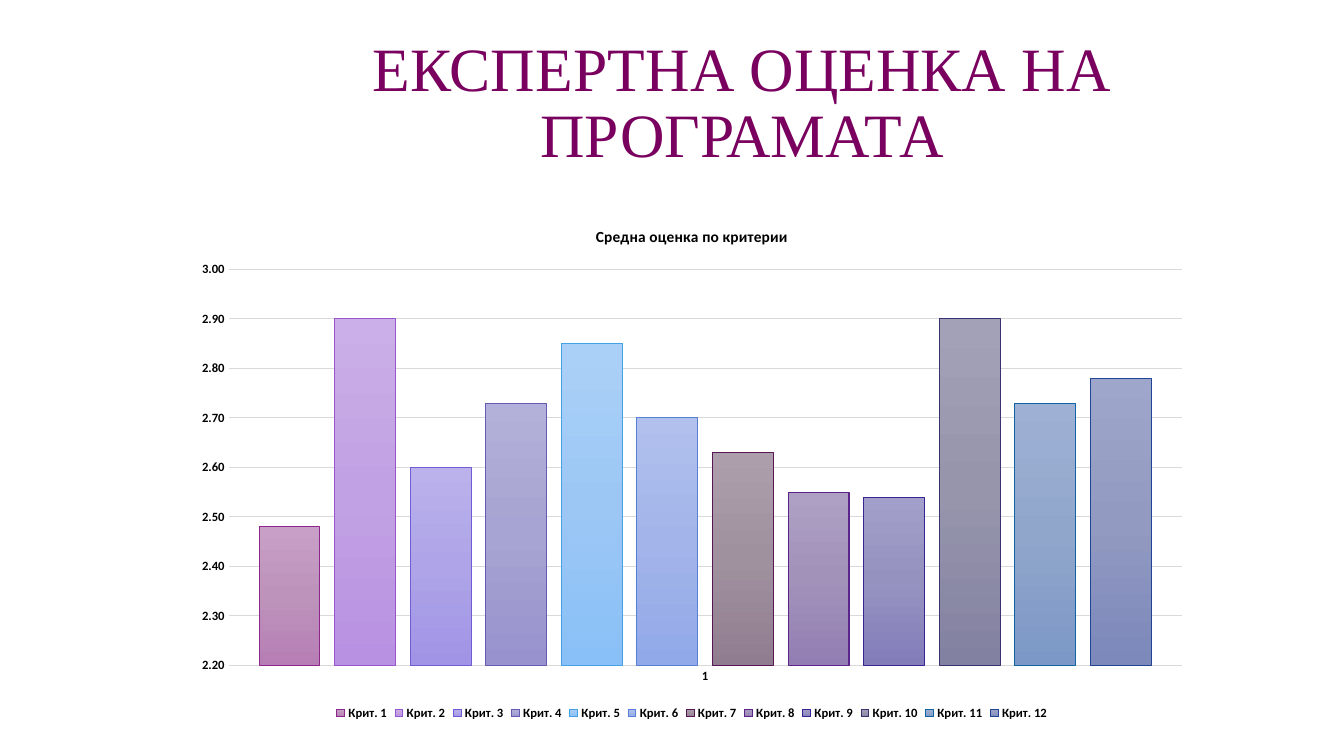
from copy import deepcopy

from pptx import Presentation
from pptx.chart.data import CategoryChartData
from pptx.dml.color import RGBColor
from pptx.enum.chart import XL_CHART_TYPE as ChartType, XL_LEGEND_POSITION as LegendPos
from pptx.enum.chart import XL_TICK_MARK as Tick
from pptx.enum.text import MSO_ANCHOR as Anchor, PP_ALIGN as Align
from pptx.util import Emu, Pt

PX = 9525
GRID = "D9D9D9"
CRITERIA = [
    (2.48, "8F268C", ("C89FC6", "BD93BB", "B67EB4")),
    (2.90, "9855CE", ("CBAFE8", "C1A1E3", "B991E3")),
    (2.60, "725BD4", ("BBB2EC", "AEA4E7", "A194E7")),
    (2.73, "645CB4", ("B3B1D9", "A7A3D2", "9893CE")),
    (2.85, "43A1E8", ("ABD0F7", "9CC7F5", "89C0F7")),
    (2.70, "577FD6", ("B1C0ED", "A2B4E9", "92A9E9")),
    (2.63, "561754", ("AC9EAB", "A0919F", "917D90")),
    (2.55, "5C248B", ("AE9FC5", "A292BA", "937EB3")),
    (2.54, "382393", ("A39FCB", "9692C0", "837EBA")),
    (2.90, "383271", ("A3A1B8", "9695AC", "8381A1")),
    (2.73, "1064A4", ("9EB1D5", "91A6CB", "7C98C7")),
    (2.78, "204595", ("9FA6CB", "929AC1", "7D88BB")),
]


def px(*lengths):
    """Turn pixel lengths into EMU."""
    return [Emu(n * PX) for n in lengths]


def rgb(color):
    """Turn a hex string into a colour."""
    return RGBColor.from_string(color)


def style_font(font, size, color, name, bold=False):
    """Set the face, size, weight and colour of a font."""
    font.name, font.size, font.bold = name, Pt(size), bold
    font.color.rgb = rgb(color)


def style_line(line, color):
    """Draw a thin solid line."""
    line.color.rgb = rgb(color)
    line.width = Pt(0.75)


def fill_gradient(series, colors):
    """Fill a series from top to bottom with three evenly spaced colours."""
    fill = series.format.fill
    fill.gradient()
    fill.gradient_angle = 270
    stop_list = series._element.xpath(".//a:gsLst")[0]
    stop_list.append(deepcopy(stop_list[0]))
    for i, (stop, color) in enumerate(zip(fill.gradient_stops, colors)):
        stop.color.rgb = rgb(color)
        stop.position = i / 2


def add_title(s, x, y, w, h):
    """Place the centred slide heading."""
    tf = s.shapes.add_textbox(*px(x, y, w, h)).text_frame
    tf.word_wrap = True
    tf.vertical_anchor = Anchor.MIDDLE
    p = tf.paragraphs[0]
    p.text = "ЕКСПЕРТНА ОЦЕНКА НА ПРОГРАМАТА"
    p.alignment = Align.CENTER
    p.line_spacing = 0.9
    style_font(p.runs[0].font, 44, "7A005F", "Times New Roman")


def add_scores(s, x, y, w, h):
    """Place the column chart of average scores."""
    data = CategoryChartData(number_format="0.00")
    data.categories = ["1"]
    for i, (value, _, _) in enumerate(CRITERIA, 1):
        data.add_series(f"Крит. {i}", [value])
    chart = s.shapes.add_chart(ChartType.COLUMN_CLUSTERED, *px(x, y, w, h), data).chart
    style_font(chart.font, 9, "000000", "Calibri", True)

    chart.has_title = True
    p = chart.chart_title.text_frame.paragraphs[0]
    p.text = "Средна оценка по критерии"
    style_font(p.runs[0].font, 11, "000000", "Calibri", True)
    chart.chart_title.include_in_layout = False

    chart.has_legend = True
    chart.legend.position = LegendPos.BOTTOM
    chart.legend.include_in_layout = False
    style_font(chart.legend.font, 9, "000000", "Calibri", True)

    for axis in (chart.category_axis, chart.value_axis):
        axis.major_tick_mark = axis.minor_tick_mark = Tick.NONE
        style_font(axis.tick_labels.font, 9, "000000", "Calibri", True)
    style_line(chart.category_axis.format.line, GRID)
    scale = chart.value_axis
    scale.minimum_scale, scale.maximum_scale, scale.major_unit = 2.2, 3, 0.1
    scale.tick_labels.number_format = "0.00"
    scale.tick_labels.number_format_is_linked = False
    scale.format.line.fill.background()
    style_line(scale.major_gridlines.format.line, GRID)

    plot = chart.plots[0]
    plot.vary_by_categories = False
    plot.gap_width, plot.overlap = 100, -24
    for series, (_, outline, colors) in zip(plot.series, CRITERIA):
        fill_gradient(series, colors)
        style_line(series.format.line, outline)


def main():
    """Build and save the slide."""
    prs = Presentation()
    prs.slide_width, prs.slide_height = px(1280, 720)
    s = prs.slides.add_slide(prs.slide_layouts[6])
    add_title(s, 189, 30, 1036, 139)
    add_scores(s, 173, 198, 972, 492)
    prs.save("out.pptx")


if __name__ == "__main__":
    main()
